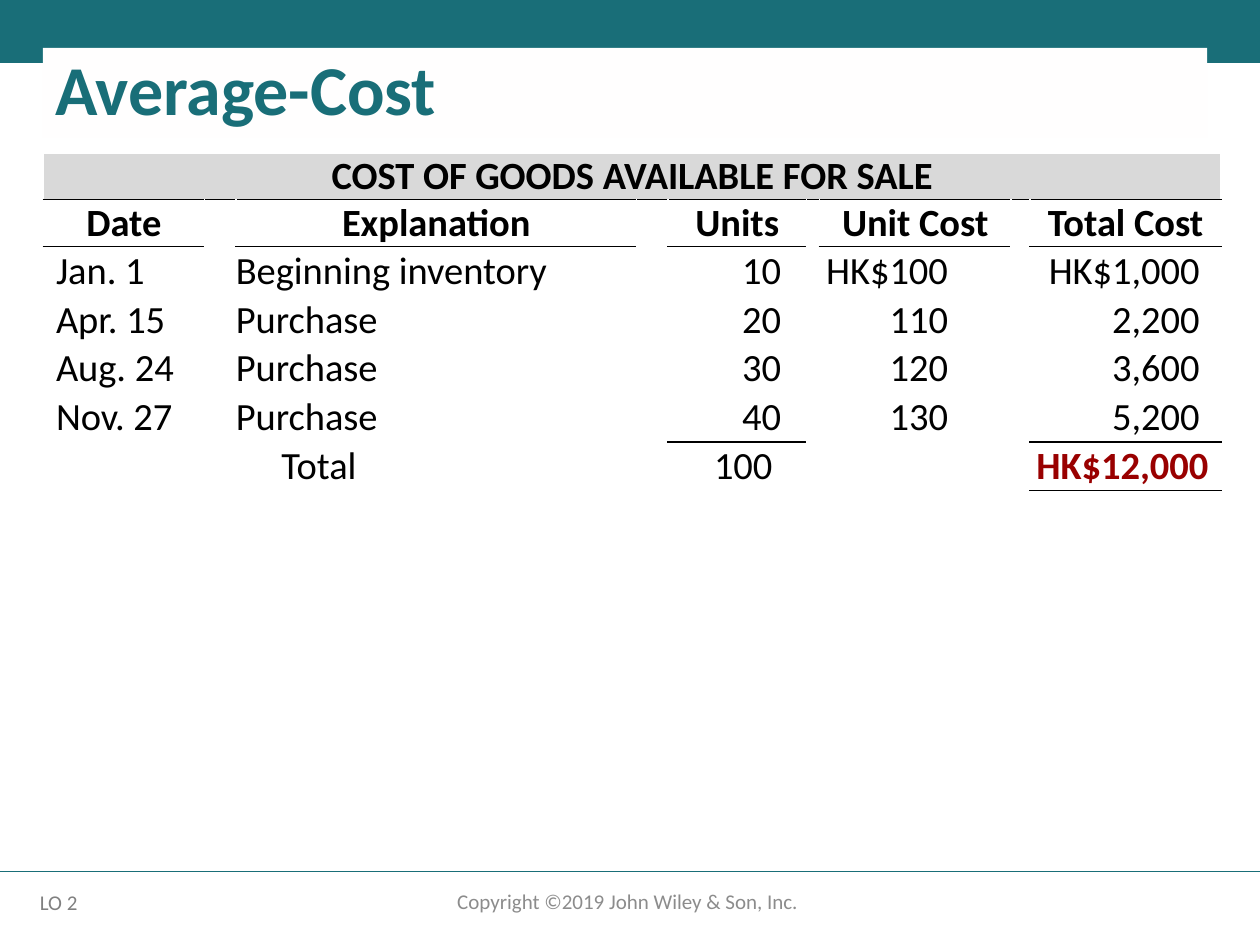
from dataclasses import dataclass

from lxml import etree
from pptx import Presentation
from pptx.dml.color import RGBColor
from pptx.enum.shapes import MSO_CONNECTOR, MSO_SHAPE
from pptx.enum.text import MSO_ANCHOR, PP_ALIGN
from pptx.oxml.ns import qn
from pptx.util import Pt

RECT, STRAIGHT = MSO_SHAPE.RECTANGLE, MSO_CONNECTOR.STRAIGHT
LEFT, CENTER, RIGHT = PP_ALIGN.LEFT, PP_ALIGN.CENTER, PP_ALIGN.RIGHT
MIDDLE, BOTTOM = MSO_ANCHOR.MIDDLE, MSO_ANCHOR.BOTTOM


@dataclass(frozen=True)
class Theme:
    font: str = "Calibri"
    teal: str = "196E78"
    title_fill: str = "FFFEFE"
    head_fill: str = "D9D9D9"
    black: str = "000000"
    white: str = "FFFFFF"
    red: str = "990000"
    copyright: str = "8C8C8C"
    objective: str = "808080"
    title_size: int = 40
    table_size: int = 22
    footer_size: int = 12


T = Theme()

COL_WIDTHS = [92, 18, 229, 18, 79, 7.5, 109.5, 11, 109]
FIELD_COLS = [0, 2, 4, 6, 8]
HEADERS = ["Date", "Explanation", "Units", "Unit Cost", "Total Cost"]
PURCHASES = [
    ["Jan. 1", "Beginning inventory", "10", "HK$100", "HK$1,000 "],
    ["Apr. 15", "Purchase", "20", "110", "2,200 "],
    ["Aug. 24", "Purchase", "30", "120", "3,600 "],
    ["Nov. 27", "Purchase", "40", "130", "5,200 "],
]
# Alignment, left margin and right margin of each field
FIELD_FORMATS = [(LEFT, 7.2, 0), (LEFT, 0, 0), (RIGHT, 0, 14.4),
                 (RIGHT, 0, 36), (RIGHT, 0, 7.2)]
# Columns with a black rule below, by row
RULES = {0: range(9), 1: FIELD_COLS, 5: [4, 8], 6: [8]}


def set_attrs(obj, values):
    for name, value in values.items():
        setattr(obj, name, value)


def write(tf, text, size, color, bold=False, align=LEFT):
    p = tf.paragraphs[0]
    p.alignment = align
    r = p.add_run()
    r.text = text
    set_attrs(r.font, {"name": T.font, "size": Pt(size), "bold": bold})
    r.font.color.rgb = RGBColor.from_string(color)
    return p


def add_rect(s, x, y, w, h, fill):
    sp = s.shapes.add_shape(RECT, Pt(x), Pt(y), Pt(w), Pt(h))
    sp.shadow.inherit = False
    sp.fill.solid()
    sp.fill.fore_color.rgb = RGBColor.from_string(fill)
    sp.line.fill.background()
    return sp


def add_rule(s, x1, y1, x2, y2, color):
    line = s.shapes.add_connector(STRAIGHT, Pt(x1), Pt(y1), Pt(x2), Pt(y2))
    line.line.color.rgb = RGBColor.from_string(color)
    line.line.width = Pt(1)
    etree.SubElement(line._element.spPr, qn("a:effectLst"))


def add_text(s, x, y, w, h, text, color, align=LEFT, margin=7.2):
    tf = s.shapes.add_textbox(Pt(x), Pt(y), Pt(w), Pt(h)).text_frame
    set_attrs(tf, {"word_wrap": True, "vertical_anchor": MIDDLE,
                   "margin_left": Pt(margin), "margin_right": Pt(margin)})
    write(tf, text, T.footer_size, color, align=align)


def set_borders(cell, colors):
    tcPr = cell._tc.get_or_add_tcPr()
    for i, (side, color) in enumerate(colors.items()):
        ln = etree.Element(qn("a:" + side), w=str(Pt(1)))
        fill = etree.SubElement(ln, qn("a:solidFill"))
        etree.SubElement(fill, qn("a:srgbClr"), val=color)
        tcPr.insert(i, ln)


def fill_cell(cell, text, align, left=0, right=0, pad=0.7, color=T.black, bold=False):
    set_attrs(cell, {"margin_left": Pt(left), "margin_right": Pt(right),
                     "margin_top": Pt(pad), "margin_bottom": Pt(pad)})
    write(cell.text_frame, text, T.table_size, color, bold, align)


def rule_color(row, col):
    return T.black if col in RULES.get(row, ()) else T.white


def add_cost_table(s):
    n_rows, n_cols = len(PURCHASES) + 3, len(COL_WIDTHS)
    frame = s.shapes.add_table(n_rows, n_cols, Pt(24.8), Pt(87.3),
                               Pt(sum(COL_WIDTHS)), Pt(193))
    table = frame.table
    set_attrs(table, {"first_row": False, "horz_banding": False})
    for col, width in zip(table.columns, COL_WIDTHS):
        col.width = Pt(width)

    # Plain cells and rules
    for i, row in enumerate(table.rows):
        row.height = Pt(26.8 if i < 2 else 27.9)
        for j, cell in enumerate(row.cells):
            set_attrs(cell, {"margin_left": 0, "margin_right": 0, "margin_top": 0,
                             "margin_bottom": 0, "vertical_anchor": BOTTOM})
            cell.fill.background()
            set_borders(cell, {"lnL": T.white, "lnR": T.white,
                               "lnT": rule_color(i - 1, j), "lnB": rule_color(i, j)})

    # Heading rows
    heading = table.cell(0, 0)
    heading.merge(table.cell(0, n_cols - 1))
    heading.fill.solid()
    heading.fill.fore_color.rgb = RGBColor.from_string(T.head_fill)
    fill_cell(heading, "COST OF GOODS AVAILABLE FOR SALE", CENTER, pad=0, bold=True)
    for j, text in zip(FIELD_COLS, HEADERS):
        fill_cell(table.cell(1, j), text, CENTER, pad=0, bold=True)

    # Inventory and purchases
    for i, record in enumerate(PURCHASES, start=2):
        for j, text, fmt in zip(FIELD_COLS, record, FIELD_FORMATS):
            fill_cell(table.cell(i, j), text, *fmt)

    # Total row
    last = n_rows - 1
    table.cell(last, 0).merge(table.cell(last, 2))
    fill_cell(table.cell(last, 0), "Total", LEFT, left=136)
    fill_cell(table.cell(last, 4), "100 ", *FIELD_FORMATS[2])
    fill_cell(table.cell(last, 8), "HK$12,000 ", *FIELD_FORMATS[4],
              color=T.red, bold=True)


def add_title(s, text):
    tf = add_rect(s, 24.5, 27.4, 665.3, 51.1, T.title_fill).text_frame
    set_attrs(tf, {"word_wrap": True, "vertical_anchor": MIDDLE})
    p = write(tf, text, T.title_size, T.teal, bold=True)
    p.line_spacing = 0.9


def main():
    prs = Presentation()
    set_attrs(prs, {"slide_width": Pt(720), "slide_height": Pt(540)})
    s = prs.slides.add_slide(prs.slide_layouts[6])

    # Top band and footer
    add_rect(s, 0, 0, 720, 36, T.teal)
    add_rule(s, 0, 498, 720, 498, T.teal)
    add_text(s, 238.3, 500.4, 243.4, 28.8, "Copyright ©2019 John Wiley & Son, Inc. ",
             T.copyright, CENTER)
    add_text(s, 22.8, 504.7, 40, 21.6, "LO 2", T.objective, margin=0)

    # Content
    add_cost_table(s)
    add_title(s, "Average-Cost")
    prs.save("out.pptx")


if __name__ == "__main__":
    main()
